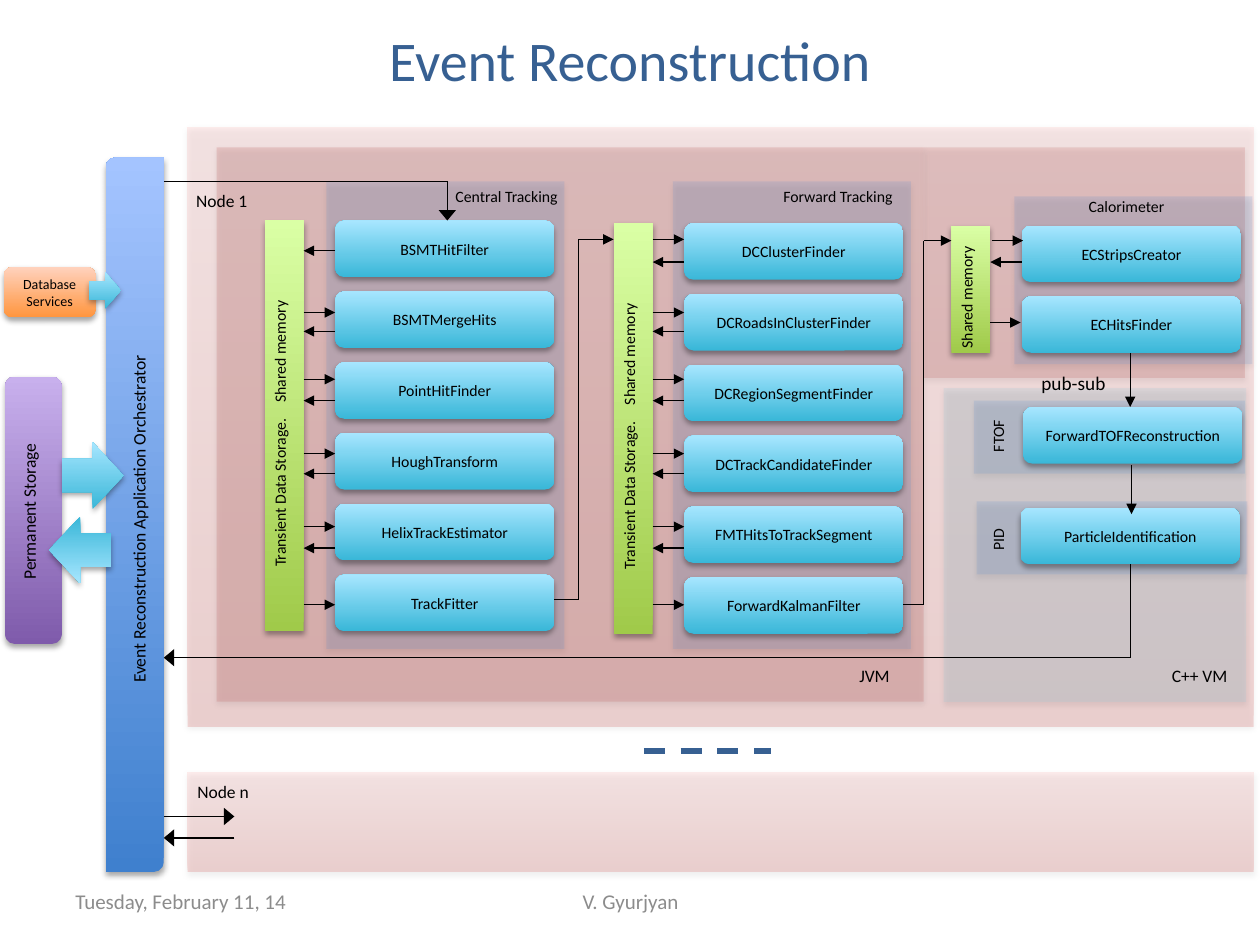
from dataclasses import dataclass
from itertools import pairwise
from typing import NamedTuple

from lxml import etree
from pptx import Presentation
from pptx import util as u
from pptx.dml.color import RGBColor
from pptx.enum import dml, shapes, text
from pptx.oxml.ns import qn

W, H = u.Inches(10), u.Inches(7.5)
COL, ROW = W // 100, H // 75
KIND = shapes.MSO_SHAPE


class Paint(NamedTuple):
    base: str
    top: str = ""
    alpha: int = 100


class Area(NamedTuple):
    col: float
    row: float
    cols: float
    rows: float


class Label(NamedTuple):
    text: str
    col: float
    row: float
    size: float
    turned: bool = False


class Box(NamedTuple):
    text: str
    col: float
    row: float


@dataclass(frozen=True)
class Theme:
    font: str = "Calibri"
    ink: str = "000000"
    accent: str = "376092"
    muted: str = "8C8C8C"
    node: Paint = Paint("D1403C", "FFA6A5", 18)
    jvm: Paint = Paint("C0504D", alpha=19)
    cpp: Paint = Paint("93CDDD", alpha=19)
    group: Paint = Paint("558ED5", alpha=17)
    service: Paint = Paint("39B7D8", "A7E6FF")
    memory: Paint = Paint("A0CA4A", "DAFFA5")
    storage: Paint = Paint("7F5BAB", "C8B0ED")
    orchestrator: Paint = Paint("3F80CE", "A4C4FF")
    database: Paint = Paint("FF953E", "FFD2BD")
    title: float = 32
    footer: float = 12
    note: float = 11
    body: float = 10
    small: float = 9
    tiny: float = 8


@dataclass(frozen=True)
class Track:
    title: Label
    bar: float
    top: float
    services: tuple[str, ...]
    outgoing: tuple[float, ...]
    incoming: tuple[float, ...]


T = Theme()
BOX_COLS, BOX_ROWS, BOX_PITCH = 17.4, 4.5, 5.62
BAR_COLS, BAR_ROWS, BAR_GAP = 3.1, 32.6, 2.5
OUTGOING = (24.8, 30.1, 36, 41.8, 48)
INCOMING = (26.3, 31.8, 37.6, 43.5)

PANELS = (
    (Area(73.3, 11.7, 25.5, 18.3), T.jvm),
    (Area(14.9, 10.1, 84.6, 47.6), T.node),
    (Area(17.2, 11.7, 56.1, 44), T.jvm),
    (Area(74.9, 30.8, 24, 24.9), T.cpp),
    (Area(53.4, 14.4, 18.9, 37.1), T.group),
    (Area(25.9, 14.4, 18.9, 37.1), T.group),
    (Area(80.5, 15.6, 18.9, 13.3), T.group),
    (Area(77.3, 31.8, 21.5, 5.8), T.group),
    (Area(77.5, 39.8, 21.5, 5.8), T.group),
    (Area(14.9, 61.3, 84.6, 7.9), T.node),
)
TRACKS = (
    Track(Label("Central Tracking", 40.2, 15.6, T.small), 21, 17.5,
          ("BSMTHitFilter", "BSMTMergeHits", "PointHitFinder", "HoughTransform",
           "HelixTrackEstimator", "TrackFitter"),
          OUTGOING, (19.9, *INCOMING)),
    Track(Label("Forward Tracking", 66.5, 15.6, T.small), 48.7, 17.7,
          ("DCClusterFinder", "DCRoadsInClusterFinder", "DCRegionSegmentFinder",
           "DCTrackCandidateFinder", "FMTHitsToTrackSegment", "ForwardKalmanFilter"),
          (19, *OUTGOING), (20.8, *INCOMING)),
)
BOXES = (
    Box("ECStripsCreator", 81.1, 17.9),
    Box("ECHitsFinder", 81.1, 23.5),
    Box("ForwardTOFReconstruction", 81.2, 32.3),
    Box("ParticleIdentification", 81, 40.3),
)
LABELS = (
    Label("Shared memory", 76.7, 23.6, T.small, True),
    Label("FTOF", 79.2, 34.6, T.small, True),
    Label("PID", 79.2, 42.8, T.small, True),
    Label("Calorimeter", 89.4, 16.4, T.small),
    Label("Permanent Storage", 2.3, 40.6, T.body, True),
    Label("Event Reconstruction Application Orchestrator", 11, 41.2, T.body, True),
    Label("C++ VM", 95.2, 53.6, T.body),
    Label("JVM", 69.4, 53.6, T.body),
    Label("Node 1", 17.6, 15.9, T.body),
    Label("Node n", 17.7, 62.8, T.body),
    Label("pub-sub", 85.2, 30.4, T.note),
)
ROUTES = (
    ((44, 47.6), (45.9, 47.6), (45.9, 19), (48.7, 19)),
    ((71.7, 48), (73.3, 48), (73.3, 19.1), (75.5, 19.1)),
    ((78.7, 19.1), (81.2, 19.1)),
    ((81.1, 20.8), (78.6, 20.8)),
    ((78.6, 25.6), (81, 25.6)),
    ((89.7, 28), (89.7, 32.3)),
    ((89.8, 36.9), (89.8, 40.8)),
)
NODE_ROUTES = (
    ((13, 14.4), (35.5, 14.4), (35.5, 17.5)),
    ((89.7, 44.8), (89.7, 52.2), (13, 52.2)),
    ((13, 64.8), (18.6, 64.8)),
    ((18.6, 66.5), (13, 66.5)),
)


def write(tf, words: str, *, size: float, color: str = T.ink,
          align=text.PP_ALIGN.CENTER, anchor=text.MSO_ANCHOR.MIDDLE, wrap: bool = True) -> None:
    tf.text, tf.word_wrap, tf.vertical_anchor = words, wrap, anchor
    for p in tf.paragraphs:
        p.alignment = align
        p.font.name, p.font.size = T.font, u.Pt(size)
        p.font.color.rgb = RGBColor.from_string(color)


def frame(a: Area) -> tuple[int, ...]:
    return tuple(round(n) for n in (a.col * COL, a.row * ROW, a.cols * COL, a.rows * ROW))


def add_shape(s, a: Area, paint: Paint, kind=KIND.RECTANGLE, words: str = "",
              size: float = T.small, turn: float = 0):
    sp = s.shapes.add_shape(kind, *frame(a))
    sp.rotation = turn
    sp.line.fill.background()
    if paint.top:
        sp.fill.gradient()
        sp.fill.gradient_angle = 90
        for stop, color in zip(sp.fill.gradient_stops, (paint.base, paint.top)):
            stop.color.rgb = RGBColor.from_string(color)
    else:
        sp.fill.solid()
        sp.fill.fore_color.rgb = RGBColor.from_string(paint.base)
    props = sp._element.spPr
    if paint.alpha < 100:
        for color in props.iter(qn("a:srgbClr")):
            etree.SubElement(color, qn("a:alpha"), val=str(paint.alpha * 1000))
    sp.shadow.inherit = False
    shadow = etree.SubElement(props.find(qn("a:effectLst")), qn("a:outerShdw"),
                              blurRad="40000", dist="23000", dir="5400000", rotWithShape="0")
    black = etree.SubElement(shadow, qn("a:srgbClr"), val=T.ink)
    etree.SubElement(black, qn("a:alpha"), val="35000")
    if words:
        write(sp.text_frame, words, size=size)
    return sp


def add_box(s, box: Box) -> None:
    add_shape(s, Area(box.col, box.row, BOX_COLS, BOX_ROWS), T.service,
              KIND.ROUNDED_RECTANGLE, box.text)


def add_label(s, label: Label) -> None:
    cols, rows = 4 + len(label.text) * label.size * 0.07, 1 + label.size * 0.17
    area = Area(label.col - cols / 2, label.row - rows / 2, cols, rows)
    sp = s.shapes.add_textbox(*frame(area))
    sp.rotation = 270 if label.turned else 0
    write(sp.text_frame, label.text, size=label.size, wrap=False)


def add_line(s, start, end, color: str = T.ink, width: float = 0.75, head: str = ""):
    ends = (round(n) for n in (start[0] * COL, start[1] * ROW, end[0] * COL, end[1] * ROW))
    c = s.shapes.add_connector(shapes.MSO_CONNECTOR.STRAIGHT, *ends)
    c.line.color.rgb, c.line.width = RGBColor.from_string(color), u.Pt(width)
    if head:
        etree.SubElement(c.line._get_or_add_ln(), qn("a:tailEnd"), type="triangle", w=head, len="med")
    etree.SubElement(c._element.spPr, qn("a:effectLst"))
    return c


def add_route(s, points, head: str = "med") -> None:
    legs = list(pairwise(points))
    for leg in legs:
        add_line(s, *leg, head=head if leg is legs[-1] else "")


def add_track(s, track: Track) -> None:
    edge = track.bar + BAR_COLS
    box_col = edge + BAR_GAP
    add_shape(s, Area(track.bar, track.top, BAR_COLS, BAR_ROWS), T.memory)
    for i, name in enumerate(track.services):
        add_box(s, Box(name, box_col, track.top + i * BOX_PITCH))
    for row in track.outgoing:
        add_route(s, ((edge, row), (box_col, row)))
    for row in track.incoming:
        add_route(s, ((box_col, row), (edge, row)))
    add_label(s, track.title)
    for words, drop in (("Transient Data Storage.", 21.6), ("Shared memory", 10.4)):
        add_label(s, Label(words, track.bar + 1.2, track.top + drop, T.small, True))


def add_title(s) -> None:
    title = s.shapes.title
    title.left, title.top, title.width, title.height = frame(Area(5, 1.5, 90, 8.2))
    write(title.text_frame, "Event Reconstruction", size=T.title, color=T.accent,
          anchor=text.MSO_ANCHOR.TOP)


def add_footer(s, words: str, area: Area, align) -> None:
    tf = s.shapes.add_textbox(*frame(area)).text_frame
    write(tf, words, size=T.footer, color=T.muted, align=align)


def main() -> None:
    prs = Presentation()
    prs.slide_width, prs.slide_height = W, H
    s = prs.slides.add_slide(prs.slide_layouts[5])
    add_title(s)
    for area, paint in PANELS:
        add_shape(s, area, paint)
    for track in TRACKS:
        add_track(s, track)
    add_shape(s, Area(75.5, 17.9, BAR_COLS, 10.1), T.memory)
    for box in BOXES:
        add_box(s, box)
    add_shape(s, Area(0.4, 29.9, 4.5, 21.2), T.storage, KIND.ROUNDED_RECTANGLE)
    add_shape(s, Area(8.4, 12.5, 4.6, 56.7), T.orchestrator, KIND.ROUND_2_DIAG_RECTANGLE)
    add_shape(s, Area(0.3, 21.2, 7.3, 4), T.database, KIND.ROUNDED_RECTANGLE,
              "Database\nServices", T.tiny)
    for area, turn in ((Area(4.9, 35.1, 4.9, 5.3), 0), (Area(3.9, 41, 4.9, 5.3), 180),
                       (Area(7.1, 21.6, 2.5, 2.9), 0)):
        add_shape(s, area, T.service, KIND.RIGHT_ARROW, turn=turn)
    for points in ROUTES:
        add_route(s, points)
    for points in NODE_ROUTES:
        add_route(s, points, head="lg")
    dashes = add_line(s, (51.1, 59.6), (61.2, 59.6), T.accent, 3)
    dashes.line.dash_style = dml.MSO_LINE.DASH
    for label in LABELS:
        add_label(s, label)
    add_footer(s, "Tuesday, February 11, 14", Area(5, 69.5, 23.3, 4), text.PP_ALIGN.LEFT)
    add_footer(s, "V. Gyurjyan", Area(34.2, 69.5, 31.7, 4), text.PP_ALIGN.CENTER)
    prs.save("out.pptx")


if __name__ == "__main__":
    main()
